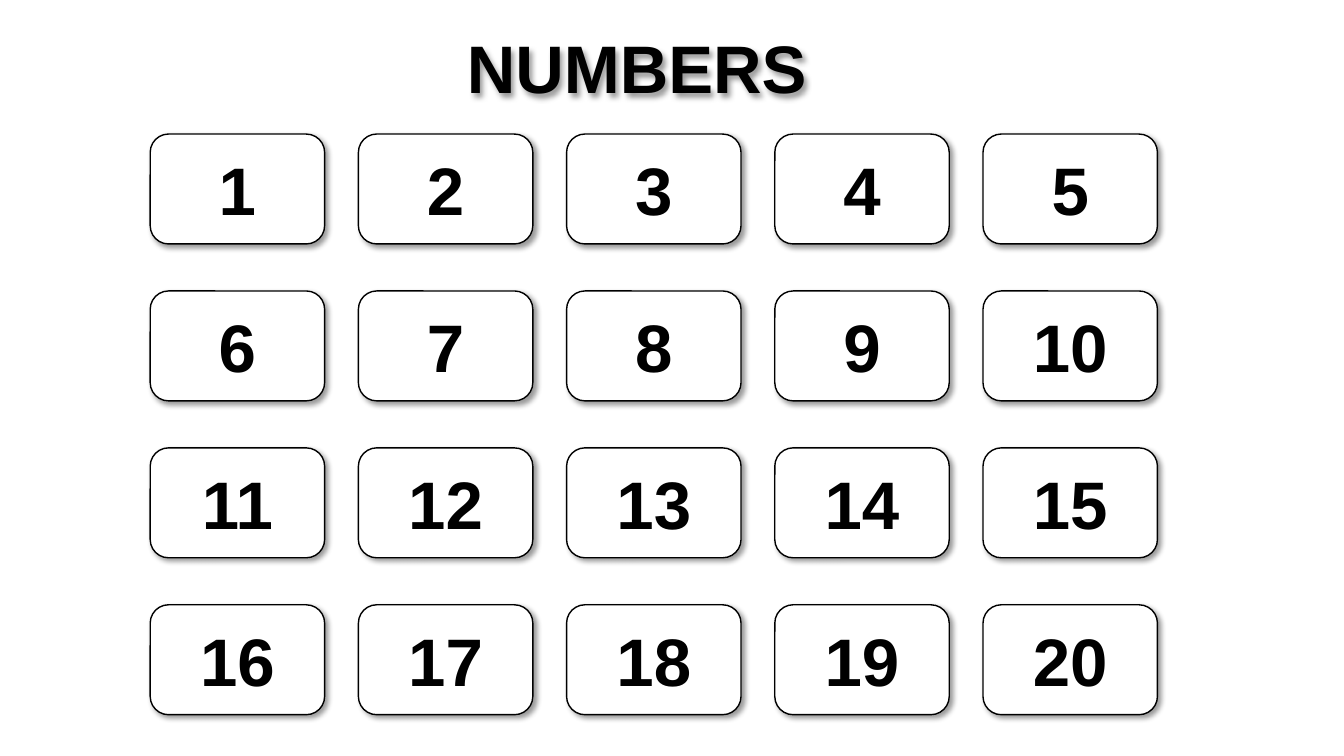
from lxml import etree
from pptx import Presentation
from pptx.dml.color import RGBColor
from pptx.enum import shapes, text
from pptx.oxml.ns import qn
from pptx.util import Inches, Pt

COLORS = {"ink": "000000", "card": "FFFFFF"}
COLUMNS, ROWS = 5, 4
LEFT, TOP = 1.49, 1.33
CARD_WIDTH, CARD_HEIGHT = 1.73, 1.09
RIGHTMOST, LOWEST = 9.75, 6
COLUMN_STEP = (RIGHTMOST - LEFT) / (COLUMNS - 1)
ROW_STEP = (LOWEST - TOP) / (ROWS - 1)


class NumberSlide:
    font = "Arial"
    size = Pt(48)

    def __init__(self, deck):
        self.page = deck.slides.add_slide(deck.slide_layouts[5])

    def color(self, name):
        return RGBColor.from_string(COLORS[name])

    def label(self, box, words):
        frame = box.text_frame
        frame.word_wrap = True
        frame.auto_size = text.MSO_AUTO_SIZE.NONE
        frame.vertical_anchor = text.MSO_ANCHOR.MIDDLE
        para = frame.paragraphs[0]
        para.alignment = text.PP_ALIGN.CENTER
        span = para.add_run()
        span.text = words
        span.font.name = self.font
        span.font.size = self.size
        span.font.bold = True
        span.font.color.rgb = self.color("ink")

    def cast_shadow(self, box):
        """Give the shape a soft shadow towards the lower right."""
        box.shadow.inherit = False
        effects = box._element.spPr.find(qn("a:effectLst"))
        shadow = etree.SubElement(
            effects, qn("a:outerShdw"), blurRad=str(Pt(4)), dist=str(Pt(3)),
            dir=str(45 * 60000), algn="tl", rotWithShape="0")
        tint = etree.SubElement(shadow, qn("a:srgbClr"), val=COLORS["ink"])
        etree.SubElement(tint, qn("a:alpha"), val="40000")

    def title(self, words, left, top, width, height):
        box = self.page.shapes.title
        box.left, box.top = Inches(left), Inches(top)
        box.width, box.height = Inches(width), Inches(height)
        self.label(box, words)
        self.cast_shadow(box)

    def card(self, words, left, top):
        box = self.page.shapes.add_shape(
            shapes.MSO_SHAPE.ROUNDED_RECTANGLE, Inches(left), Inches(top),
            Inches(CARD_WIDTH), Inches(CARD_HEIGHT))
        box.fill.solid()
        box.fill.fore_color.rgb = self.color("card")
        box.line.color.rgb = self.color("ink")
        box.line.width = Pt(1)
        self.label(box, words)
        self.cast_shadow(box)


def main():
    deck = Presentation()
    deck.slide_width, deck.slide_height = Inches(13.33), Inches(7.5)
    slide = NumberSlide(deck)
    slide.title("NUMBERS", 3.56, 0.12, 5.51, CARD_HEIGHT)
    for index in range(COLUMNS * ROWS):
        row, column = divmod(index, COLUMNS)
        slide.card(str(index + 1), LEFT + column * COLUMN_STEP, TOP + row * ROW_STEP)
    deck.save("out.pptx")


if __name__ == "__main__":
    main()
